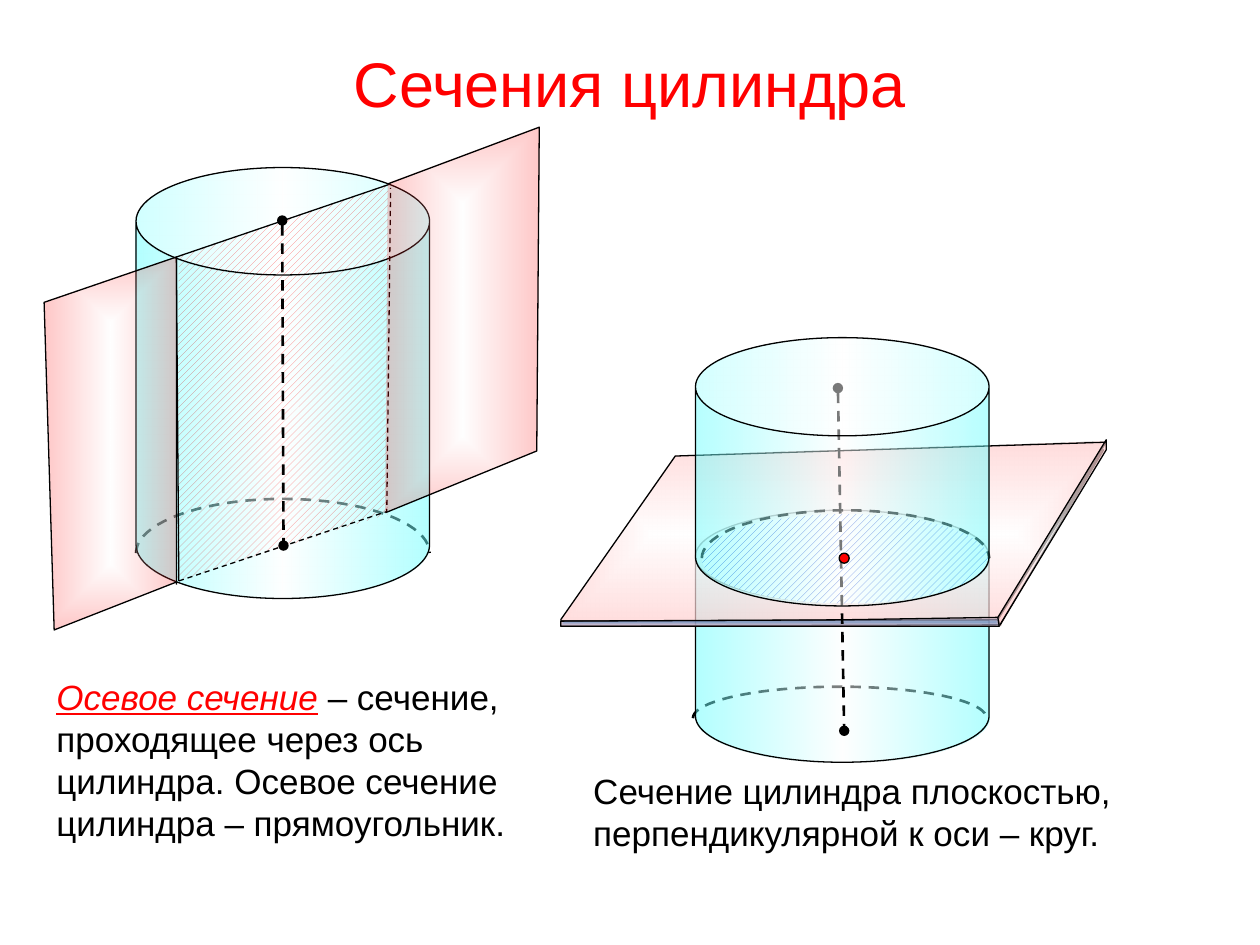
from math import cos, pi, sin

from lxml import etree
from pptx import Presentation
from pptx.dml.color import RGBColor
from pptx.enum.dml import MSO_LINE, MSO_PATTERN
from pptx.enum.shapes import MSO_CONNECTOR, MSO_SHAPE
from pptx.enum.text import MSO_ANCHOR, PP_ALIGN
from pptx.oxml import parse_xml
from pptx.oxml.ns import nsdecls, qn
from pptx.util import Inches, Pt

BLACK, WHITE, RED = "000000", "FFFFFF", "FF0000"
CYAN, PINK, BLUE = "66FFFF", "FFCCCC", "4F81BD"
HATCH_BLUE = "0033CC"
THIN, THICK = 0.75, 1.5
LINEAR = '<a:lin ang="0" scaled="1"/>'
RECTANGULAR = ('<a:path path="rect"><a:fillToRect l="50000" t="50000" '
               'r="50000" b="50000"/></a:path>')


def color(hex_string):
    return RGBColor.from_string(hex_string)


def fill_gradient(shape, colors, alpha, direction):
    """Spread the colours evenly, all with the same opacity in percent."""
    stops = "".join(
        f'<a:gs pos="{100000 * index // (len(colors) - 1)}"><a:srgbClr val="{value}">'
        f'<a:alpha val="{alpha * 1000}"/></a:srgbClr></a:gs>'
        for index, value in enumerate(colors))
    shape.fill.background()
    placeholder = shape._element.spPr.find(qn("a:noFill"))
    gradient = parse_xml(f'<a:gradFill {nsdecls("a")} rotWithShape="1">'
                         f'<a:gsLst>{stops}</a:gsLst>{direction}</a:gradFill>')
    shape._element.spPr.replace(placeholder, gradient)


def fill_hatch(shape, foreground):
    shape.fill.patterned()
    shape.fill.pattern = MSO_PATTERN.WIDE_UPWARD_DIAGONAL
    shape.fill.fore_color.rgb = color(foreground)
    shape.fill.back_color.rgb = color(WHITE)


def set_line(shape, width=THIN, dashed=False):
    shape.line.color.rgb = color(BLACK)
    shape.line.width = Pt(width)
    if dashed:
        shape.line.dash_style = MSO_LINE.DASH


def add_preset(slide, kind, origin, left, top, width, height):
    shape = slide.shapes.add_shape(
        kind, Inches(origin[0] + left), Inches(origin[1] + top),
        Inches(width), Inches(height))
    shape.shadow.inherit = False
    return shape


def add_outline(slide, origin, points, close=False):
    """Add an unfilled outline through points measured from the origin."""
    start, *rest = [(Inches(x), Inches(y)) for x, y in points]
    builder = slide.shapes.build_freeform(*start)
    builder.add_line_segments(rest, close=close)
    shape = builder.convert_to_shape(Inches(origin[0]), Inches(origin[1]))
    shape.shadow.inherit = False
    shape.fill.background()
    return shape


def add_hidden_rim(slide, origin, left, top, width, height, steps=40):
    """Draw the far half of an ellipse as a dashed line."""
    angles = [pi * step / steps for step in range(steps + 1)]
    points = [(left + width / 2 * (1 - cos(angle)), top + height * (1 - sin(angle)))
              for angle in angles]
    set_line(add_outline(slide, origin, points), THICK, dashed=True)


def add_cylinder(slide, origin, left, top, width, height, alpha=50):
    cylinder = add_preset(slide, MSO_SHAPE.CAN, origin, left, top, width, height)
    cylinder.adjustments[0] = 0.366
    fill_gradient(cylinder, [CYAN, WHITE, CYAN], alpha, LINEAR)
    set_line(cylinder)


def add_plane(slide, origin, points, colors, alpha, close=False):
    plane = add_outline(slide, origin, points, close)
    fill_gradient(plane, colors, alpha, RECTANGULAR)
    set_line(plane)


def add_axis(slide, origin, start, end):
    ends = [Inches(base + offset) for point in (start, end)
            for base, offset in zip(origin, point)]
    axis = slide.shapes.add_connector(MSO_CONNECTOR.STRAIGHT, *ends)
    set_line(axis, THICK, dashed=True)
    for tag in ("a:headEnd", "a:tailEnd"):
        etree.SubElement(axis.line._get_or_add_ln(), qn(tag), type="oval")
    etree.SubElement(axis._element.spPr, qn("a:effectLst"))


def add_text(slide, box, parts, size, alignment=PP_ALIGN.LEFT, anchor=MSO_ANCHOR.TOP):
    """Add one paragraph from (text, colour, is_term) parts."""
    text_frame = slide.shapes.add_textbox(*map(Inches, box)).text_frame
    text_frame.word_wrap = True
    text_frame.vertical_anchor = anchor
    paragraph = text_frame.paragraphs[0]
    paragraph.alignment = alignment
    for text, text_color, is_term in parts:
        run = paragraph.add_run()
        run.text = text
        run.font.name = "Arial"
        run.font.size = Pt(size)
        run.font.color.rgb = color(text_color)
        run.font.italic = run.font.underline = is_term


def add_axial_section(slide, origin):
    section = add_outline(slide, origin, [
        (1.05, 3.61), (2.73, 3.08), (2.73, 0.47), (1.07, 1.04)], close=True)
    fill_hatch(section, RED)
    section.line.fill.background()

    add_hidden_rim(slide, origin, 0.73, 2.96, 2.33, 0.43)
    add_cylinder(slide, origin, 0.73, 0.33, 2.33, 3.42)
    add_axis(slide, origin, (1.89, 0.75), (1.9, 3.33))

    visible_edge = [(2.75, 0.46), (1.05, 1.04), (1.07, 3.61)]
    hidden_edge = [(1.07, 3.61), (2.72, 3.06), (2.75, 0.49)]
    for points, dashed in ((visible_edge, False), (hidden_edge, True)):
        set_line(add_outline(slide, origin, points), dashed=dashed)

    right_wing = [(2.73, 0.46), (3.93, 0.01), (3.91, 2.58), (2.71, 3.07)]
    left_wing = [(1.05, 3.64), (1.05, 1.04), (0, 1.4), (0.08, 4), (1.05, 3.62)]
    for points in (right_wing, left_wing):
        add_plane(slide, origin, points, [WHITE, RED], 22)


def add_perpendicular_section(slide, origin):
    add_hidden_rim(slide, origin, 1.05, 2.77, 2.33, 0.25)
    add_cylinder(slide, origin, 1.07, 1.37, 2.33, 2)

    plane_top = [(0, 2.24), (0.91, 0.94), (4.33, 0.83), (3.47, 2.24),
                 (0, 2.25), (0, 2.29), (3.49, 2.28), (3.5, 2.26),
                 (4.31, 0.89), (3.47, 2.24), (0, 2.25)]
    plane_side = [(4.33, 0.81), (4.33, 0.89), (3.48, 2.29), (3.47, 2.22)]
    plane_front = [(0, 2.25), (2.22, 2.24), (3.47, 2.22), (3.48, 2.29), (0, 2.29)]
    add_plane(slide, origin, plane_top, [WHITE, PINK], 68)
    add_plane(slide, origin, plane_side, [WHITE, PINK], 68, close=True)
    add_plane(slide, origin, plane_front, [BLUE, PINK], 68, close=True)

    section = add_preset(slide, MSO_SHAPE.OVAL, origin, 1.12, 1.4, 2.28, 0.71)
    fill_hatch(section, HATCH_BLUE)
    section.line.fill.background()
    add_hidden_rim(slide, origin, 1.12, 1.37, 2.28, 0.38)
    add_axis(slide, origin, (2.2, 0.4), (2.25, 3.12))
    add_cylinder(slide, origin, 1.07, 0, 2.33, 2.13, alpha=47)

    center = add_preset(slide, MSO_SHAPE.OVAL, origin, 2.21, 1.71, 0.08, 0.08)
    center.fill.solid()
    center.fill.fore_color.rgb = color(RED)
    set_line(center)


def main():
    presentation = Presentation()
    presentation.slide_width, presentation.slide_height = Inches(10), Inches(7.5)
    slide = presentation.slides.add_slide(presentation.slide_layouts[6])
    add_text(slide, (0.5, 0.3, 9, 0.71), [("Сечения цилиндра", RED, False)],
             36, PP_ALIGN.CENTER, MSO_ANCHOR.MIDDLE)
    add_axial_section(slide, (0.35, 1))
    add_perpendicular_section(slide, (4.45, 2.68))
    add_text(slide, (0.35, 5.31, 3.94, 1.45), [
        ("Осевое сечение", RED, True),
        (" – сечение, проходящее через ось цилиндра. "
         "Осевое сечение цилиндра – прямоугольник.", BLACK, False)], 20)
    add_text(slide, (4.61, 6.06, 4.51, 0.77), [
        ("Сечение цилиндра плоскостью, перпендикулярной к оси – круг.",
         BLACK, False)], 20)
    presentation.save("out.pptx")


if __name__ == "__main__":
    main()
